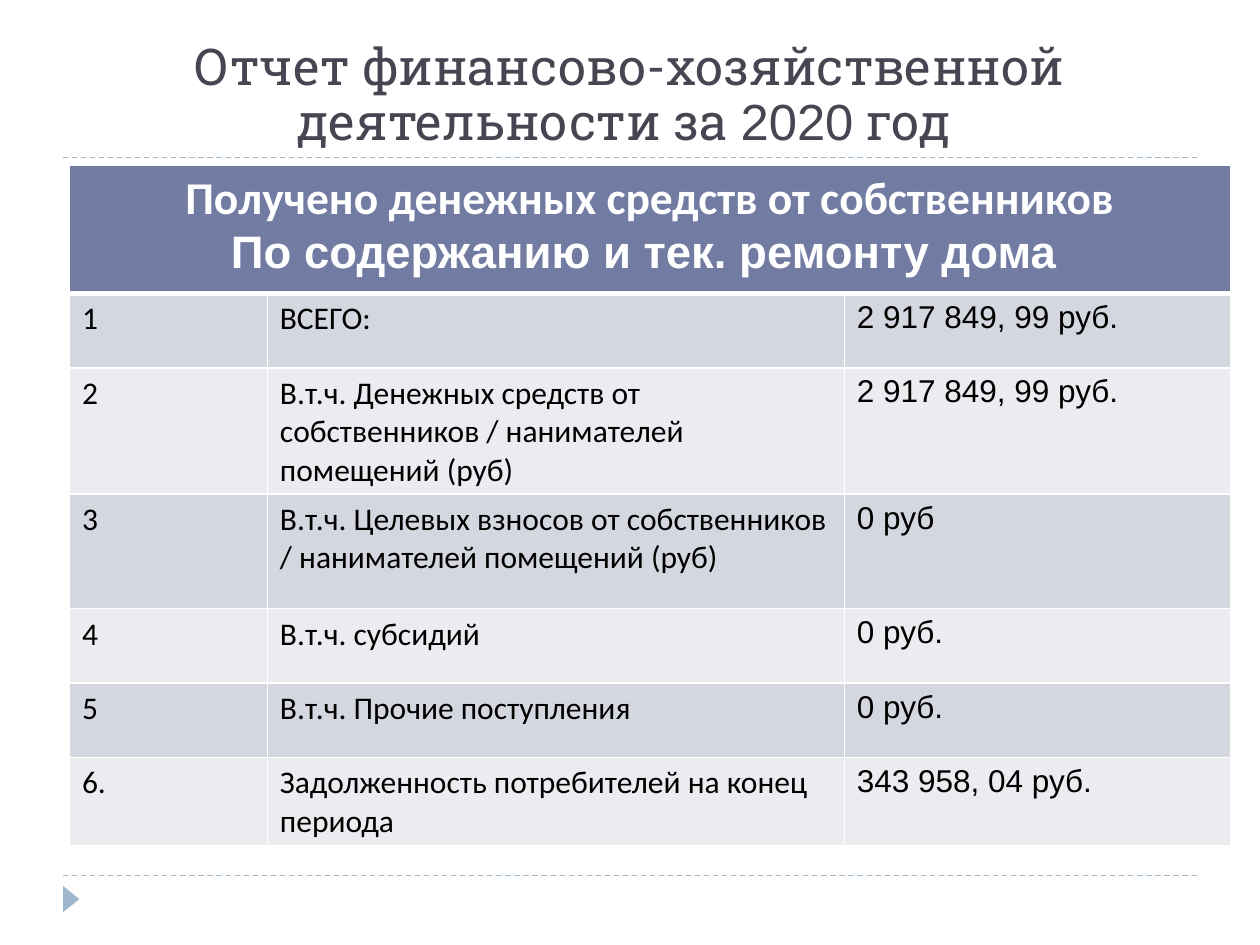
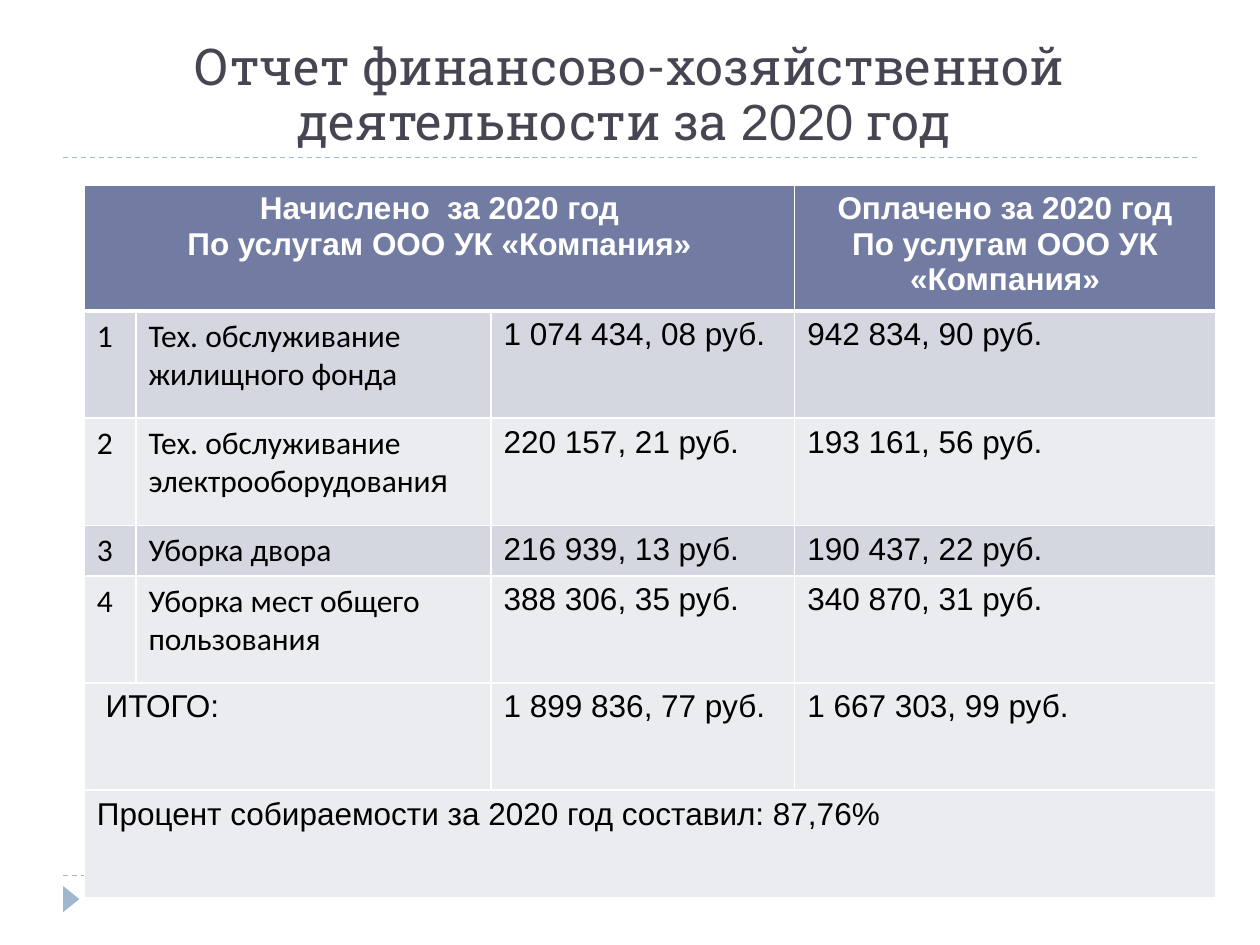
from lxml.etree import SubElement
from pptx import Presentation
from pptx.dml.color import RGBColor
from pptx.enum.dml import MSO_LINE
from pptx.enum.shapes import MSO_CONNECTOR, MSO_SHAPE
from pptx.enum.text import MSO_ANCHOR, PP_ALIGN
from pptx.oxml import parse_xml
from pptx.oxml.ns import nsdecls, qn
from pptx.util import Cm, Pt

# Content: "|" switches to Arial, a line break starts a paragraph
TITLE = [("Отчет финансово-хозяйственной деятельности за ", "Roboto Slab"),
         ("2020", "Arial"), (" год ", "Roboto Slab")]

INCOME = [
    ["Получено денежных средств от собственников\n|По содержанию и тек. ремонту дома "],
    ["1", "ВСЕГО:", "2 917 849, 99 руб."],
    ["2", "В.т.ч. Денежных средств от собственников / нанимателей помещений (руб)",
     "2 917 849, 99 руб."],
    ["3", "В.т.ч. Целевых взносов от собственников / нанимателей помещений (руб)", "0 руб"],
    ["4", "В.т.ч. субсидий", "0 руб."],
    ["5", "В.т.ч. Прочие поступления", "0 руб."],
    ["6.", "Задолженность потребителей на конец периода", "343 958, 04 руб."],
]

BILLED = [
    ["|Начислено  за 2020 год\n|По услугам ООО УК «Компания»", "", "",
     "Оплачено за 2020 год\nПо услугам ООО УК «Компания»"],
    ["1", "Тех. обслуживание жилищного фонда", "1 074 434, 08 руб.", "942 834, 90 руб."],
    ["2", "Тех. обслуживание электрооборудовани|я", "220 157, 21 руб.", "193 161, 56 руб."],
    ["3", "Уборка двора", "216 939, 13 руб.", "190 437, 22 руб."],
    ["4", "Уборка мест общего пользования", "388 306, 35 руб.", "340 870, 31 руб."],
    ["| ИТОГО:", "", "1 899 836, 77 руб.", "1 667 303, 99 руб."],
    ["|Процент собираемости за 2020 год составил: 87,76%"],
]

# Per table: place, sizes in cm, row -> merged columns, first total row
TABLES = [
    dict(data=INCOME, left=1.4, top=3.33, cols=[3.99, 11.63, 7.8],
         rows=[2.59, 1.5, 2.31, 2.31, 1.5, 1.5, 1.63],
         spans={0: 3}, total=7, head=26),
    dict(data=BILLED, left=1.7, top=3.73, cols=[1.04, 7.16, 6.12, 8.48],
         rows=[1.5, 2.16, 2.16, 0.94] + [2.16] * 3,
         spans={0: 3, 5: 2, 6: 4}, total=5, head=18),
]

COLORS = dict(head="727CA3", dark="D5D7E0", light="EBECF0", title="464653",
              rule="9FB8CD", white="FFFFFF", black="000000")
EDGE = 1.27
WIDTH = 22.86


def color(name):
    return RGBColor.from_string(COLORS[name])


def add_run(para, text, face, size, tone, bold=False):
    run = para.add_run()
    run.text = text
    font = run.font
    font.name, font.size, font.bold = face, Pt(size), bold
    font.color.rgb = color(tone)


def add_frame(slide):
    # Dashed rules
    for y in (17.65, 3.18):
        rule = slide.shapes.add_connector(
            MSO_CONNECTOR.STRAIGHT, Cm(EDGE), Cm(y), Cm(EDGE + WIDTH), Cm(y))
        rule.line.color.rgb = color("rule")
        rule.line.width = Pt(0.75)
        rule.line.dash_style = MSO_LINE.DASH
        SubElement(rule.element.spPr, qn("a:effectLst"))
    # Corner marker
    mark = slide.shapes.add_shape(
        MSO_SHAPE.ISOSCELES_TRIANGLE, Cm(1.17), Cm(17.96), Cm(0.53), Cm(0.33))
    mark.rotation = 90
    mark.shadow.inherit = False
    mark.fill.solid()
    mark.fill.fore_color.rgb = color("rule")
    mark.line.fill.background()
    # Title
    frame = slide.shapes.add_textbox(Cm(EDGE), Cm(0.64), Cm(WIDTH), Cm(2.54)).text_frame
    frame.word_wrap = True
    frame.vertical_anchor = MSO_ANCHOR.BOTTOM
    para = frame.paragraphs[0]
    para.alignment = PP_ALIGN.CENTER
    para.line_spacing = 0.9
    for text, face in TITLE:
        add_run(para, text, face, 29, "title")


def set_edges(cell, row):
    props = cell._tc.get_or_add_tcPr()
    wide = {0: "B", 1: "T"}.get(row)
    for i, side in enumerate("LRTB"):
        width = Pt(3 if side == wide else 1)
        props.insert(i, parse_xml(
            f'<a:ln{side} {nsdecls("a")} w="{width}"><a:solidFill>'
            f'<a:srgbClr val="{COLORS["white"]}"/></a:solidFill></a:ln{side}>'))


def fill_text(cell, text, row, col, head):
    for i, line in enumerate(text.split("\n")):
        frame = cell.text_frame
        para = frame.add_paragraph() if i else frame.paragraphs[0]
        if row == 0:
            para.alignment = PP_ALIGN.CENTER
        for j, part in enumerate(line.split("|")):
            if part:
                face = "Calibri" if col < 2 and j == 0 else "Arial"
                add_run(para, part, face, 18 if row else head,
                        "black" if row else "white", row == 0)


def add_grid(slide, data, left, top, cols, rows, spans, total, head):
    grid = slide.shapes.add_table(len(rows), len(cols), Cm(left), Cm(top),
                                  Cm(sum(cols)), Cm(sum(rows))).table
    grid.horz_banding = False
    for col, width in zip(grid.columns, cols):
        col.width = Cm(width)
    for row, height in zip(grid.rows, rows):
        row.height = Cm(height)
    for r, count in spans.items():
        grid.cell(r, 0).merge(grid.cell(r, count - 1))
    for r, texts in enumerate(data):
        tone = "head" if r == 0 else "dark" if r % 2 and r < total else "light"
        for c in range(len(cols)):
            cell = grid.cell(r, c)
            cell.fill.solid()
            cell.fill.fore_color.rgb = color(tone)
            set_edges(cell, r)
            if c < len(texts) and texts[c]:
                fill_text(cell, texts[c], r, c, head)


def main():
    deck = Presentation()
    deck.slide_width, deck.slide_height = Cm(25.4), Cm(19.05)
    for table in TABLES:
        slide = deck.slides.add_slide(deck.slide_layouts[6])
        add_frame(slide)
        add_grid(slide, **table)
    deck.save("out.pptx")


if __name__ == "__main__":
    main()
